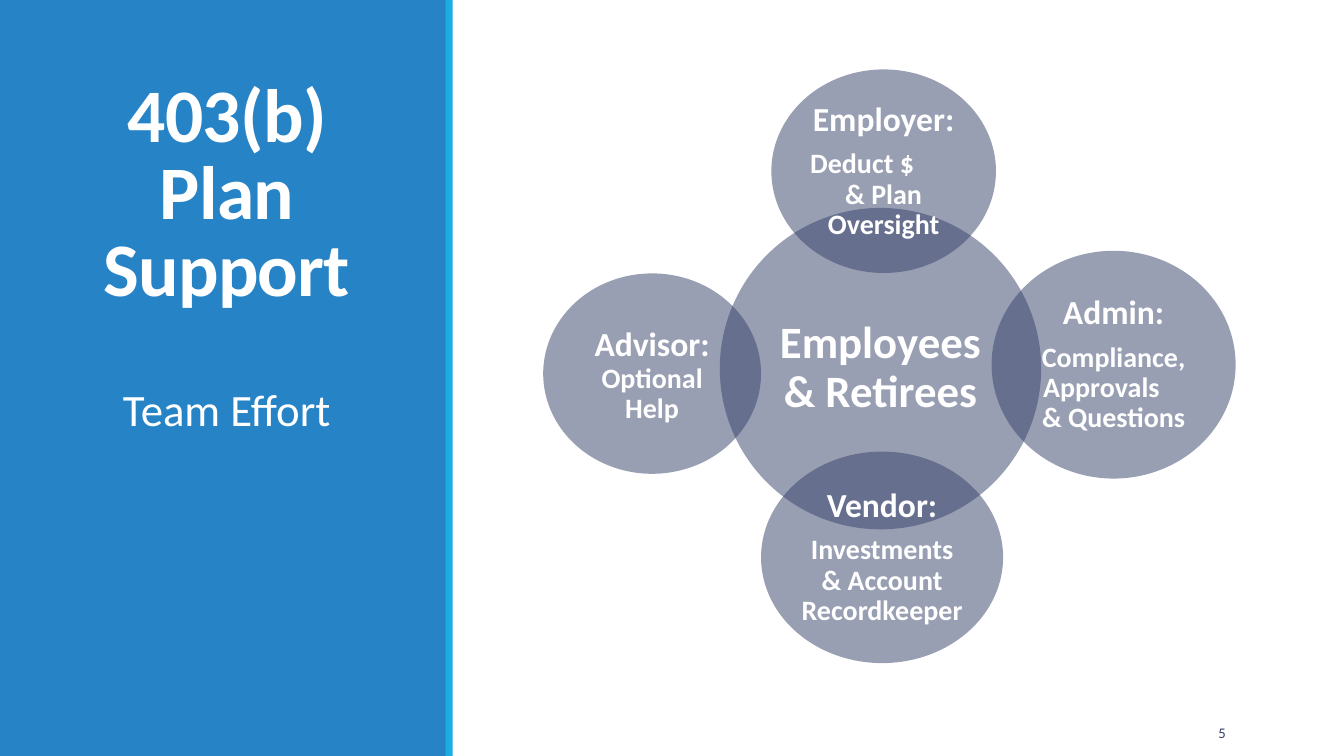
from pptx import Presentation
from pptx.dml.color import RGBColor
from pptx.enum.shapes import MSO_SHAPE as Shape
from pptx.enum.text import MSO_ANCHOR as Anchor, PP_ALIGN as Align
from pptx.oxml.ns import qn
from pptx.util import Cm, Pt
from lxml.etree import SubElement


def colour(value):
    return RGBColor.from_string(value)


def write(para, text, size=20, bold=True, shade="FFFFFF", align=Align.CENTER,
          spacing=0.9, after=0, indent=0, tracking=0):
    para.alignment = align
    para.line_spacing = spacing
    para.space_before = Pt(0)
    para.space_after = Pt(after)
    if indent:
        para._p.get_or_add_pPr().set("marL", str(Cm(indent)))
    span = para.add_run()
    span.text = text
    span.font.name = "Calibri"
    span.font.size = Pt(size)
    span.font.bold = bold
    span.font.color.rgb = colour(shade)
    if tracking:
        span._r.get_or_add_rPr().set("spc", str(tracking))


class TeamPage:
    blue = "2683C6"
    cyan = "1CADE4"
    navy = "344068"

    def __init__(self, deck):
        self.page = deck.slides.add_slide(deck.slide_layouts[5])

    def shape(self, kind, place, fill, alpha=None):
        shape = self.page.shapes.add_shape(kind, *map(Cm, place))
        shape.shadow.inherit = False
        shape.fill.solid()
        shape.fill.fore_color.rgb = colour(fill)
        shape.line.fill.background()
        if alpha:
            tone = shape.fill._xPr.find(qn("a:solidFill"))[0]
            SubElement(tone, qn("a:alpha")).set("val", str(alpha * 1000))
        return shape

    def title(self, place, text):
        title = self.page.shapes.title
        self.page.shapes._spTree.append(title._element)
        title.left, title.top, title.width, title.height = map(Cm, place)
        box = title.text_frame
        box.word_wrap = True
        box.vertical_anchor = Anchor.BOTTOM
        write(box.paragraphs[0], text, size=54, spacing=0.85, tracking=-50)

    def circle(self, place, lines, inset=0.08):
        box = self.shape(Shape.OVAL, place, self.navy, alpha=50).text_frame
        box.word_wrap = True
        box.vertical_anchor = Anchor.MIDDLE
        box.margin_left = box.margin_right = Cm(inset)
        box.margin_top = box.margin_bottom = Cm(inset)
        for index, spans in enumerate(lines):
            para = box.add_paragraph() if index else box.paragraphs[0]
            for text, style in spans:
                write(para, text, **style)

    def label(self, place, text, anchor=Anchor.TOP, **style):
        box = self.page.shapes.add_textbox(*map(Cm, place)).text_frame
        box.word_wrap = True
        box.vertical_anchor = anchor
        write(box.paragraphs[0], text, **style)


def main():
    deck = Presentation()
    deck.slide_width, deck.slide_height = Cm(33.87), Cm(19.05)
    team = TeamPage(deck)

    team.shape(Shape.RECTANGLE, (0, 0, 11.25, 19.05), team.blue)
    team.shape(Shape.RECTANGLE, (11.23, 0, 0.18, 19.05), team.cyan)
    team.title((1.27, 1.65, 8.89, 6.35), "403(b) Plan Support")

    heading = {"size": 24, "after": 8}
    left = {"align": Align.LEFT, "indent": 0.07}
    inset_left = {"align": Align.LEFT, "indent": 0.32}
    team.circle((18.14, 5.24, 8.1, 8.1),
                [[("Employees & Retirees", {"size": 32})]], inset=0.1)
    team.circle((19.44, 1.75, 5.66, 5.13), [
        [("Employer:", heading)],
        [("Deduct $", left)],
        [("& Plan Oversight", {})],
    ])
    team.circle((24.99, 6.32, 6.15, 5.74), [
        [("Admin:", heading)],
        [("Compliance,", {})],
        [("Approvals", inset_left)],
        [("& Questions", {})],
    ])
    team.circle((19.18, 11.38, 6.1, 5.33), [
        [("Vendor:", heading)],
        [("Investments & Account Recordkeeper", {})],
    ])
    team.circle((13.69, 6.89, 5.49, 5.05), [
        [("Advisor:", {"size": 24}), (" ", {"size": 28}), ("Optional Help", {})],
    ])

    team.label((1.27, 9.65, 8.89, 7.8), "Team Effort", size=32, bold=False)
    team.label((27.51, 17.95, 3.63, 1.02), "5", anchor=Anchor.MIDDLE, size=10.5,
               bold=False, shade=team.navy, align=Align.RIGHT, spacing=1.0)
    deck.save("out.pptx")


if __name__ == "__main__":
    main()
